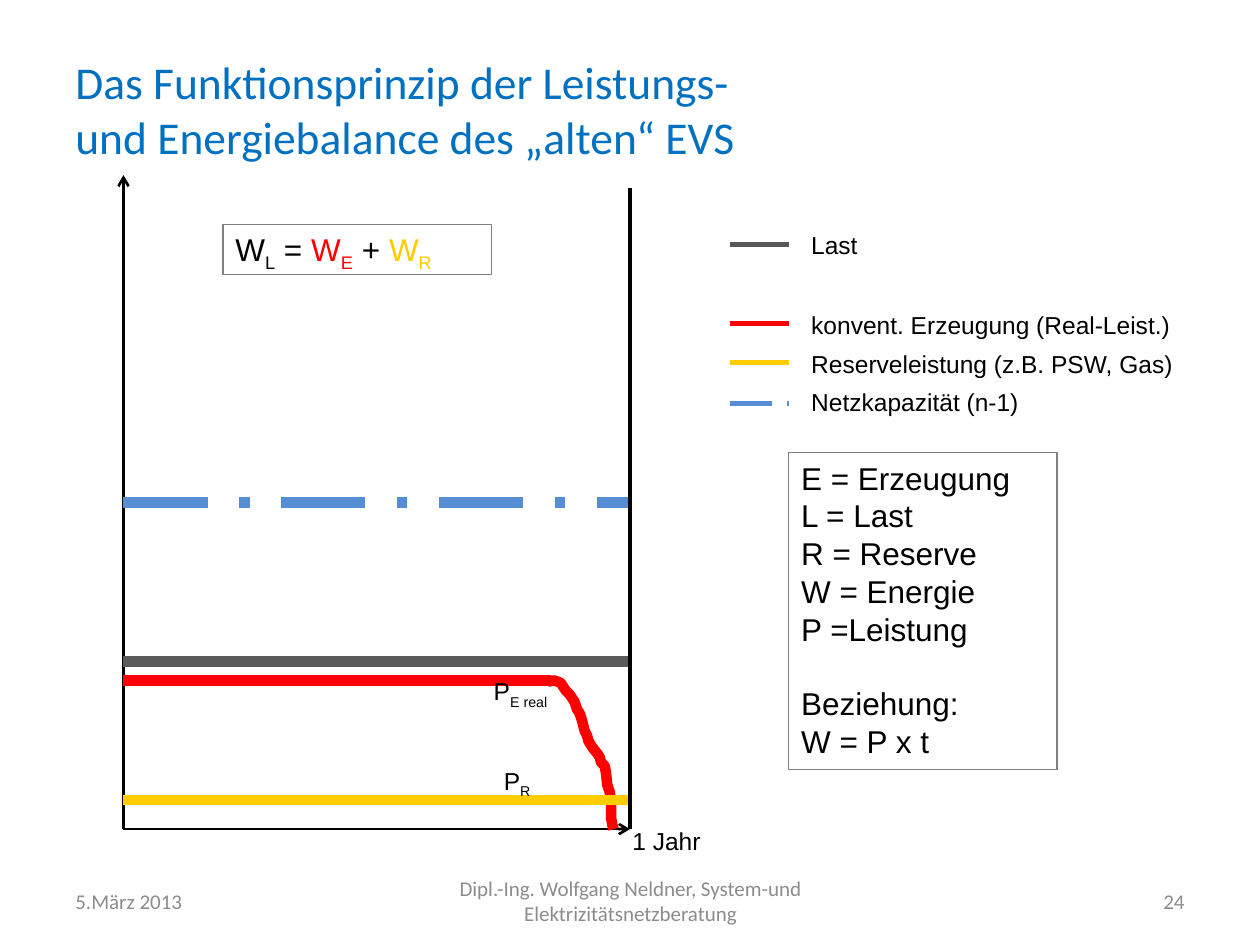
from lxml import etree
from pptx import Presentation
from pptx.dml.color import RGBColor
from pptx.enum.dml import MSO_LINE
from pptx.enum.shapes import MSO_CONNECTOR
from pptx.enum.text import MSO_ANCHOR, PP_ALIGN
from pptx.oxml.ns import qn
from pptx.util import Emu, Pt

STRAIGHT = MSO_CONNECTOR.STRAIGHT
DASH_DOT = MSO_LINE.LONG_DASH_DOT
TOP, MIDDLE = MSO_ANCHOR.TOP, MSO_ANCHOR.MIDDLE
LEFT, CENTER, RIGHT = PP_ALIGN.LEFT, PP_ALIGN.CENTER, PP_ALIGN.RIGHT

PX = 9144  # EMU per px, 100 px to the inch
COLORS = {
    "title": "0070C0", "footer": "8C8C8C", "text": "000000", "border": "808080",
    "load": "595959", "generation": "FF0000", "reserve": "FFCC00", "grid": "558ED5",
}

# Chart frame
AXIS_X, YEAR_X, BASE_Y = 98, 500, 658

# Generation drops to zero towards the end of the year
DROP = [
    (435, 541), (440, 540), (445, 542), (449, 548), (452, 551), (456, 557),
    (458, 563), (460, 566), (462, 572), (464, 580), (466, 584), (467, 588),
    (470, 593), (474, 598), (476, 601), (477, 605), (480, 608), (481, 614),
    (482, 623), (484, 629), (485, 639), (485, 649), (486, 655), (487, 658),
]

# name, level in chart, end of level, legend line y, legend text y, dash, legend text
SERIES = [
    ("load", 525, YEAR_X, 194, 178, None, "Last"),
    ("generation", 540, 437, 257, 241, None, "konvent. Erzeugung (Real-Leist.)"),
    ("reserve", 635, YEAR_X, 288, 272, None, "Reserveleistung (z.B. PSW, Gas)"),
    ("grid", 399, YEAR_X, 320, 302, DASH_DOT, "Netzkapazität (n-1)"),
]


def px(value):
    return Emu(value * PX)


def rgb(name):
    return RGBColor.from_string(COLORS[name])


def add_line(slide, start, end, color, width, dash=None, arrow=False):
    line = slide.shapes.add_connector(STRAIGHT, *map(px, start + end))
    line.line.color.rgb = rgb(color)
    line.line.width = Pt(width)
    if dash:
        line.line.dash_style = dash
    if arrow:
        etree.SubElement(line.line._get_or_add_ln(), qn("a:tailEnd"), type="arrow")
    etree.SubElement(line._element.spPr, qn("a:effectLst"))


def add_curve(slide, points, color, width):
    builder = slide.shapes.build_freeform(*points[0], scale=PX)
    builder.add_line_segments(points[1:], close=False)
    curve = builder.convert_to_shape()
    curve.shadow.inherit = False
    curve.fill.background()
    curve.line.color.rgb = rgb(color)
    curve.line.width = Pt(width)
    etree.SubElement(curve.line._get_or_add_ln(), qn("a:round"))


def add_box(slide, box, anchor=TOP, border=False):
    shape = slide.shapes.add_textbox(*map(px, box))
    frame = shape.text_frame
    frame.word_wrap = True
    frame.vertical_anchor = anchor
    if border:
        shape.line.color.rgb = rgb("border")
        shape.line.width = Pt(0.75)
    return frame


def style(paragraph, size, font="Arial", color="text", align=LEFT):
    paragraph.alignment = align
    paragraph.font.size = Pt(size)
    paragraph.font.name = font
    paragraph.font.color.rgb = rgb(color)


def add_text(slide, box, lines, size, font="Arial", color="text", align=LEFT,
             anchor=TOP, border=False):
    frame = add_box(slide, box, anchor, border)
    frame.text = "\n".join(lines)
    for paragraph in frame.paragraphs:
        style(paragraph, size, font, color, align)
    return frame


def add_formula(slide, box, terms, size, border=False):
    """Each term is (symbol, subscript, colour)."""
    paragraph = add_box(slide, box, border=border).paragraphs[0]
    style(paragraph, size)
    for symbol, subscript, color in terms:
        for text, baseline in ((symbol, None), (subscript, "-25000")):
            if not text:
                continue
            run = paragraph.add_run()
            run.text = text
            if color != "text":
                run.font.color.rgb = rgb(color)
            if baseline:
                run._r.get_or_add_rPr().set("baseline", baseline)


def add_chart_lines(slide):
    origin = (AXIS_X, BASE_Y)
    add_line(slide, origin, (AXIS_X, 139), "text", 1.5, arrow=True)
    add_line(slide, origin, (YEAR_X, BASE_Y), "text", 1.5, arrow=True)
    for name, level, end, legend_y, label_y, dash, label in SERIES:
        add_line(slide, (AXIS_X, level), (end, level), name, 6, dash)
        if name == "generation":
            add_curve(slide, DROP, name, 6)
        add_line(slide, (579, legend_y), (626, legend_y), name, 3, dash)
        add_text(slide, (634, label_y, 307, 34), [label], 14)


def main():
    prs = Presentation()
    prs.slide_width, prs.slide_height = px(1000), px(750)
    slide = prs.slides.add_slide(prs.slide_layouts[6])

    # Title and footer
    add_text(slide, (50, 24, 900, 125),
             ["Das Funktionsprinzip der Leistungs-\vund Energiebalance des „alten“ EVS"],
             26, "Calibri", "title", anchor=MIDDLE)
    for left, width, text, align in (
        (50, 233, "5.März 2013", LEFT),
        (342, 317, "Dipl.-Ing. Wolfgang Neldner, System-und Elektrizitätsnetzberatung", CENTER),
        (717, 233, "24", RIGHT),
    ):
        add_text(slide, (left, 695, width, 40), [text], 12, "Calibri", "footer", align, MIDDLE)

    # Chart with legend
    add_chart_lines(slide)
    add_text(slide, (492, 651, 158, 34), ["1 Jahr"], 14)

    # Energy balance and key to the symbols
    add_formula(slide, (177, 178, 213, 40), [
        ("W", "L", "text"), (" = ", "", "text"), ("W", "E", "generation"),
        (" + ", "", "text"), ("W", "R", "reserve"),
    ], 18, border=True)
    key = add_text(slide, (626, 359, 213, 252), [
        "E = Erzeugung", "L = Last", "R = Reserve", "W = Energie", "P =Leistung",
        "Beziehung:", "W = P x t",
    ], 18, border=True)
    key.paragraphs[5].space_before = Pt(21)

    # Curve labels and end of the year
    add_formula(slide, (382, 532, 142, 34), [("P", "E real", "text")], 14)
    add_formula(slide, (390, 603, 142, 34), [("P", "R", "text")], 14)
    add_line(slide, (YEAR_X, BASE_Y), (YEAR_X, 149), "text", 2.25)

    prs.save("out.pptx")


if __name__ == "__main__":
    main()
